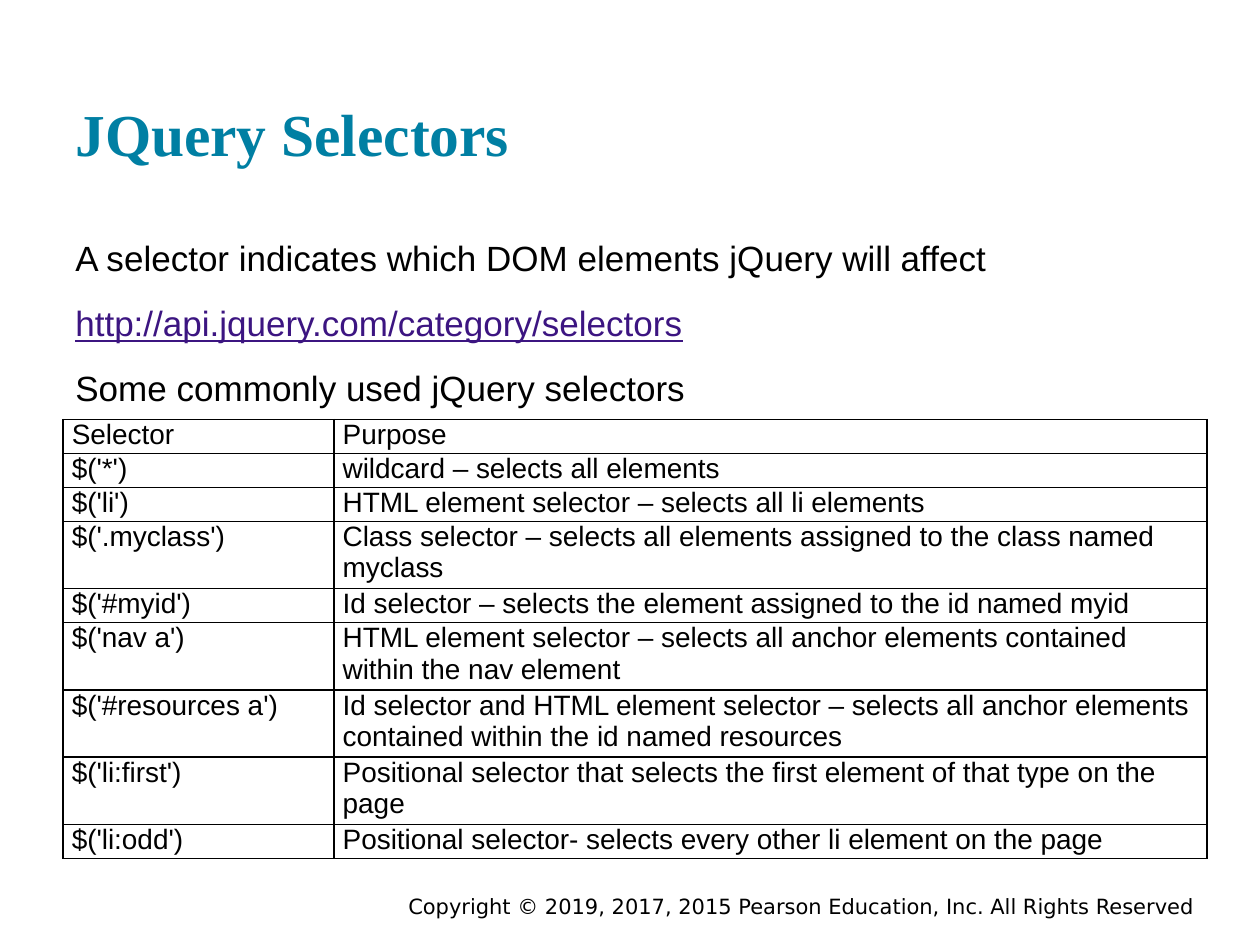
from dataclasses import dataclass

from lxml import etree
from pptx import Presentation
from pptx.dml.color import RGBColor
from pptx.enum.text import MSO_ANCHOR, PP_ALIGN
from pptx.oxml.ns import qn
from pptx.util import Inches, Pt


@dataclass(frozen=True)
class Theme:
    heading_font: str = "Times New Roman"
    body_font: str = "Arial"
    footer_font: str = "DejaVu Sans"
    heading: RGBColor = RGBColor(0x00, 0x7F, 0xA3)
    text: RGBColor = RGBColor(0x00, 0x00, 0x00)
    link: RGBColor = RGBColor(0x3C, 0x15, 0x81)
    paper: RGBColor = RGBColor(0xFF, 0xFF, 0xFF)
    heading_size: int = 34
    body_size: int = 20
    table_size: int = 16
    footer_size: int = 12
    paragraph_gap: int = 13
    border_width: int = 1


THEME = Theme()
ROW_HEIGHT = {1: 0.27, 2: 0.53}

INTRO = [
    ("A selector indicates which DOM elements jQuery will affect", False),
    ("http://api.jquery.com/category/selectors", True),
    ("Some commonly used jQuery selectors", False),
]

# Selector, purpose, lines of text in the row
SELECTORS = [
    ("Selector", "Purpose", 1),
    ("$('*')", "wildcard – selects all elements", 1),
    ("$('li')", "HTML element selector – selects all li elements", 1),
    ("$('.myclass')", "Class selector – selects all elements assigned to the class named myclass", 2),
    ("$('#myid')", "Id selector – selects the element assigned to the id named myid", 1),
    ("$('nav a')", "HTML element selector – selects all anchor elements contained "
     "within the nav element", 2),
    ("$('#resources a')", "Id selector and HTML element selector – selects all anchor elements "
     "contained within the id named resources", 2),
    ("$('li:first')", "Positional selector that selects the first element of that type on the page", 2),
    ("$('li:odd')", "Positional selector- selects every other li element on the page", 1),
]


def add_run(paragraph, text, font_name, size, color, bold=False, underline=False):
    run = paragraph.add_run()
    run.text = text
    font = run.font
    font.name = font_name
    font.size = Pt(size)
    font.color.rgb = color
    font.bold = bold
    font.underline = underline


def add_text_frame(slide, box, anchor, top_inset=0.1):
    """Add a wrapping text box at box (left, top, width, height in inches)."""
    frame = slide.shapes.add_textbox(*map(Inches, box)).text_frame
    frame.word_wrap = True
    frame.vertical_anchor = anchor
    frame.margin_left = frame.margin_right = frame.margin_bottom = Inches(0.1)
    frame.margin_top = Inches(top_inset)
    return frame


def add_title(slide, box):
    frame = add_text_frame(slide, box, MSO_ANCHOR.BOTTOM)
    add_run(frame.paragraphs[0], "JQuery Selectors", THEME.heading_font,
            THEME.heading_size, THEME.heading, bold=True)


def add_intro(slide, box):
    frame = add_text_frame(slide, box, MSO_ANCHOR.TOP, top_inset=0.13)
    for index, (text, is_link) in enumerate(INTRO):
        paragraph = frame.add_paragraph() if index else frame.paragraphs[0]
        if index:
            paragraph.space_before = Pt(THEME.paragraph_gap)
        add_run(paragraph, text, THEME.body_font, THEME.body_size,
                THEME.link if is_link else THEME.text, underline=is_link)


def set_borders(cell):
    properties = cell._tc.get_or_add_tcPr()
    for position, side in enumerate(("a:lnL", "a:lnR", "a:lnT", "a:lnB")):
        line = etree.Element(qn(side), w=str(Pt(THEME.border_width)))
        fill = etree.SubElement(line, qn("a:solidFill"))
        etree.SubElement(fill, qn("a:srgbClr"), val=str(THEME.text))
        properties.insert(position, line)


def fill_cell(cell, text):
    cell.fill.solid()
    cell.fill.fore_color.rgb = THEME.paper
    cell.margin_left = cell.margin_right = Inches(0.07)
    cell.margin_top = cell.margin_bottom = 0
    set_borders(cell)
    add_run(cell.text_frame.paragraphs[0], text, THEME.body_font, THEME.table_size, THEME.text)


def add_selector_table(slide, box, selector_width):
    left, top, width, height = map(Inches, box)
    table = slide.shapes.add_table(len(SELECTORS), 2, left, top, width, height).table
    table.first_row = table.horz_banding = False
    table.columns[0].width = Inches(selector_width)
    table.columns[1].width = width - Inches(selector_width)
    for row, (selector, purpose, line_count) in zip(table.rows, SELECTORS):
        row.height = Inches(ROW_HEIGHT[line_count])
        for cell, text in zip(row.cells, (selector, purpose)):
            fill_cell(cell, text)


def add_footer(slide, box):
    frame = add_text_frame(slide, box, MSO_ANCHOR.MIDDLE, top_inset=0.1)
    paragraph = frame.paragraphs[0]
    paragraph.alignment = PP_ALIGN.RIGHT
    add_run(paragraph, "Copyright © 2019, 2017, 2015 Pearson Education, Inc. All Rights Reserved",
            THEME.footer_font, THEME.footer_size, THEME.text)


def main():
    presentation = Presentation()
    presentation.slide_width = Inches(10)
    presentation.slide_height = Inches(7.5)
    slide = presentation.slides.add_slide(presentation.slide_layouts[6])
    add_footer(slide, (2.97, 7.07, 6.61, 0.25))
    add_title(slide, (0.5, 0.24, 9, 1.2))
    add_intro(slide, (0.5, 1.75, 9, 1.55))
    add_selector_table(slide, (0.5, 3.33, 9.08, 3.47), selector_width=2.15)
    presentation.save("out.pptx")


if __name__ == "__main__":
    main()
